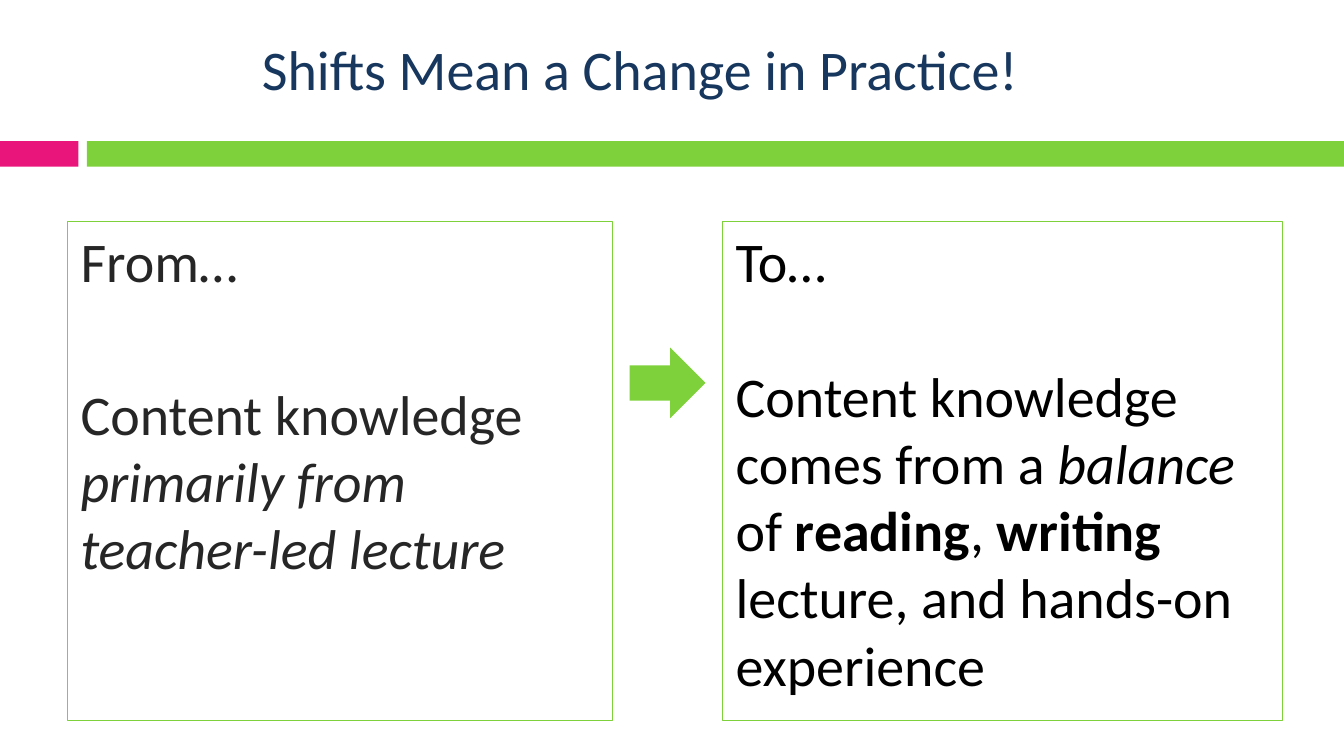
from pptx import Presentation
from pptx.dml.color import RGBColor
from pptx.enum.shapes import MSO_SHAPE
from pptx.enum.text import MSO_ANCHOR, PP_ALIGN
from pptx.util import Cm, Pt

RECTANGLE = MSO_SHAPE.RECTANGLE
RIGHT_ARROW = MSO_SHAPE.RIGHT_ARROW
TOP = MSO_ANCHOR.TOP
MIDDLE = MSO_ANCHOR.MIDDLE
LEFT = PP_ALIGN.LEFT

TITLE = [[("Shifts Mean a Change in Practice!", {})]]
FROM_TEXT = [
    [("From…", {})],
    [("Content knowledge ", {}),
     ("primarily from teacher-led lecture", {"italic": True})],
]
TO_TEXT = [
    [("To…", {})],
    [("Content knowledge comes from a ", {}),
     ("balance", {"italic": True}),
     (" of ", {}),
     ("reading", {"bold": True}),
     (", ", {}),
     ("writing", {"bold": True}),
     (" lecture, and hands-on experience", {})],
]

THEME = {
    "font": "Calibri",
    "size": Pt(40),
    "line": Pt(0.75),
    "pink": RGBColor.from_string("EA157A"),
    "green": RGBColor.from_string("7FD13B"),
    "navy": RGBColor.from_string("17375E"),
    "charcoal": RGBColor.from_string("262626"),
    "black": RGBColor.from_string("000000"),
}

SLIDE_WIDTH, SLIDE_HEIGHT = 33.87, 19.05
BAND_TOP, BAND_HEIGHT = 3.56, 0.64
PINK_WIDTH, BAND_GAP = 1.98, 0.21
PANEL_TOP, PANEL_HEIGHT = 5.59, 12.57
ARROW_TOP, ARROW_WIDTH, ARROW_HEIGHT = 8.76, 1.91, 1.78

TITLE_BOX = (6.35, 0.51, 22.86, 2.41)
PANELS = [
    (1.7, 13.74, FROM_TEXT, "charcoal", Pt(61)),
    (18.21, 14.12, TO_TEXT, "black", Pt(48)),
]


def set_values(target, values):
    for name, value in values.items():
        setattr(target, name, value)


def add_plain_shape(slide, kind, box, fill=None, line=None):
    shape = slide.shapes.add_shape(kind, *map(Cm, box))
    shape.shadow.inherit = False
    if fill:
        shape.fill.solid()
        shape.fill.fore_color.rgb = THEME[fill]
    else:
        shape.fill.background()
    if line:
        shape.line.color.rgb = THEME[line]
        shape.line.width = THEME["line"]
    else:
        shape.line.fill.background()
    return shape


def write_text(shape, paragraphs, color, anchor, side_inset, gap=Pt(0)):
    frame = shape.text_frame
    set_values(frame, {
        "word_wrap": True, "vertical_anchor": anchor,
        "margin_left": Cm(side_inset), "margin_right": Cm(side_inset),
        "margin_top": Cm(0.13), "margin_bottom": Cm(0.13),
    })
    for index, runs in enumerate(paragraphs):
        paragraph = frame.add_paragraph() if index else frame.paragraphs[0]
        set_values(paragraph, {"alignment": LEFT,
                               "space_before": gap if index else Pt(0)})
        for text, style in runs:
            run = paragraph.add_run()
            run.text = text
            set_values(run.font, {"name": THEME["font"],
                                  "size": THEME["size"], **style})
            run.font.color.rgb = THEME[color]


def main():
    presentation = Presentation()
    presentation.slide_width = Cm(SLIDE_WIDTH)
    presentation.slide_height = Cm(SLIDE_HEIGHT)
    slide = presentation.slides.add_slide(presentation.slide_layouts[6])

    green_left = PINK_WIDTH + BAND_GAP
    for left, width, fill in [(0, PINK_WIDTH, "pink"),
                              (green_left, SLIDE_WIDTH - green_left, "green")]:
        add_plain_shape(slide, RECTANGLE,
                        (left, BAND_TOP, width, BAND_HEIGHT), fill=fill)

    title = slide.shapes.add_textbox(*map(Cm, TITLE_BOX))
    write_text(title, TITLE, "navy", MIDDLE, 0.25)

    for left, width, paragraphs, color, gap in PANELS:
        panel = add_plain_shape(slide, RECTANGLE,
                                (left, PANEL_TOP, width, PANEL_HEIGHT),
                                line="green")
        write_text(panel, paragraphs, color, TOP, 0.33, gap)

    from_right = PANELS[0][0] + PANELS[0][1]
    to_left = PANELS[1][0]
    arrow_left = (from_right + to_left - ARROW_WIDTH) / 2
    add_plain_shape(slide, RIGHT_ARROW,
                    (arrow_left, ARROW_TOP, ARROW_WIDTH, ARROW_HEIGHT),
                    fill="green")

    presentation.save("out.pptx")


if __name__ == "__main__":
    main()
